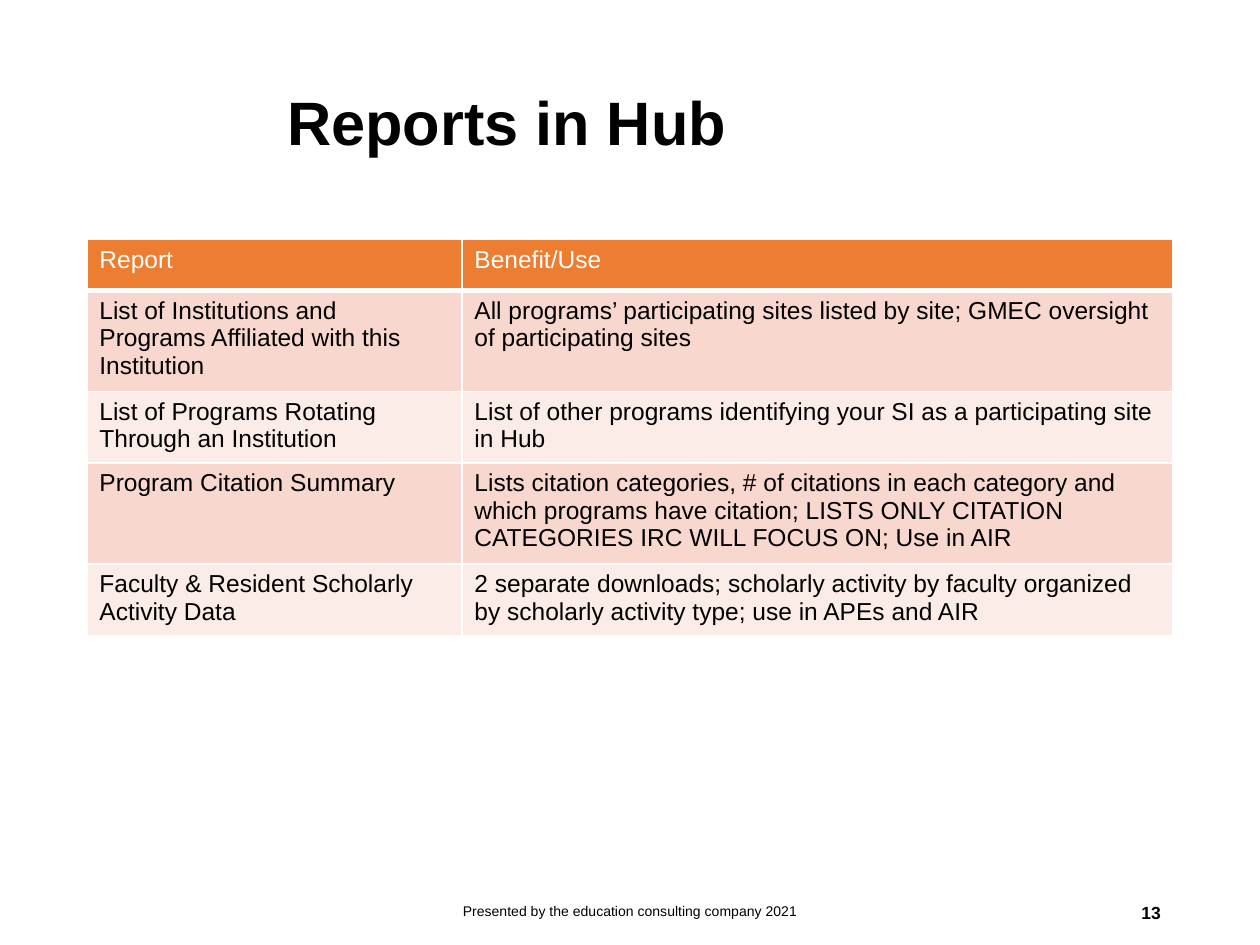
from lxml import etree
from pptx import Presentation
from pptx.dml.color import RGBColor
from pptx.enum.text import MSO_ANCHOR, PP_ALIGN
from pptx.oxml.ns import qn
from pptx.util import Cm, Pt

MIDDLE = MSO_ANCHOR.MIDDLE
LEFT, CENTER, RIGHT = PP_ALIGN.LEFT, PP_ALIGN.CENTER, PP_ALIGN.RIGHT

COLORS = {
    "text": "000000",
    "header_text": "FFFFFF",
    "header": "ED7D31",
    "odd_row": "F8D7CE",
    "even_row": "FCECE8",
    "border": "FFFFFF",
}
FONT = "Arial"

REPORTS = [
    ("Report", "Benefit/Use"),
    ("List of Institutions and Programs Affiliated with this Institution",
     "All programs’ participating sites listed by site; GMEC oversight of participating sites"),
    ("List of Programs Rotating Through an Institution",
     "List of other programs identifying your SI as a participating site in Hub"),
    ("Program Citation Summary",
     "Lists citation categories, # of citations in each category and which programs have "
     "citation; LISTS ONLY CITATION CATEGORIES IRC WILL FOCUS ON; Use in AIR"),
    ("Faculty & Resident Scholarly Activity Data",
     "2 separate downloads; scholarly activity by faculty organized by scholarly activity "
     "type; use in APEs and AIR"),
]
COLUMN_WIDTHS = (7.56, 14.34)
ROW_HEIGHT = 1.03
TABLE_LEFT, TABLE_TOP = 1.75, 4.83

# text, (left, top, width, height) in cm, vertical margin in cm,
# paragraph format, font format
LABELS = [
    ("Reports in Hub", (5.54, 0.69, 18.14, 3.68), 0.25,
     {"alignment": LEFT, "line_spacing": 0.9}, {"size": Pt(35), "bold": True}),
    ("Presented by the education consulting company 2021", (8.41, 17.86, 8.59, 1.02), 0.13,
     {"alignment": CENTER}, {"size": Pt(8)}),
    ("13", (17.93, 17.88, 5.72, 1.02), 0.13,
     {"alignment": RIGHT}, {"size": Pt(10), "bold": True}),
]


def apply_format(target, values):
    for name, value in values.items():
        setattr(target, name, value)


def write(frame, text, paragraph_format, font_format, color):
    paragraph = frame.paragraphs[0]
    apply_format(paragraph, paragraph_format)
    run = paragraph.add_run()
    run.text = text
    apply_format(run.font, {"name": FONT, **font_format})
    run.font.color.rgb = RGBColor.from_string(COLORS[color])


def add_label(slide, text, place, margin, paragraph_format, font_format):
    frame = slide.shapes.add_textbox(*map(Cm, place)).text_frame
    apply_format(frame, {
        "word_wrap": True, "vertical_anchor": MIDDLE,
        "margin_left": Cm(0.25), "margin_right": Cm(0.25),
        "margin_top": Cm(margin), "margin_bottom": Cm(margin),
    })
    write(frame, text, paragraph_format, font_format, "text")


def add_borders(cell, bottom_width):
    properties = cell._tc.get_or_add_tcPr()
    widths = {"lnL": 1, "lnR": 1, "lnT": 1, "lnB": bottom_width}
    # Borders must come before the fill
    for position, (side, width) in enumerate(widths.items()):
        line = etree.Element(qn(f"a:{side}"), w=str(Pt(width)))
        fill = etree.SubElement(line, qn("a:solidFill"))
        etree.SubElement(fill, qn("a:srgbClr"), val=COLORS["border"])
        properties.insert(position, line)


def add_report_table(slide):
    table = slide.shapes.add_table(
        len(REPORTS), len(COLUMN_WIDTHS), Cm(TABLE_LEFT), Cm(TABLE_TOP),
        Cm(sum(COLUMN_WIDTHS)), Cm(ROW_HEIGHT * len(REPORTS))).table
    for column, width in zip(table.columns, COLUMN_WIDTHS):
        column.width = Cm(width)
    for row_number, report in enumerate(REPORTS):
        # Rows grow to fit their wrapped text
        table.rows[row_number].height = Cm(ROW_HEIGHT)
        is_header = row_number == 0
        band = "header" if is_header else "odd_row" if row_number % 2 else "even_row"
        for column_number, text in enumerate(report):
            cell = table.cell(row_number, column_number)
            cell.fill.solid()
            cell.fill.fore_color.rgb = RGBColor.from_string(COLORS[band])
            add_borders(cell, 3 if is_header else 1)
            write(cell.text_frame, text, {"alignment": LEFT},
                  {"size": Pt(14), "bold": False},
                  "header_text" if is_header else "text")


def main():
    presentation = Presentation()
    presentation.slide_width, presentation.slide_height = Cm(25.4), Cm(19.05)
    slide = presentation.slides.add_slide(presentation.slide_layouts[6])

    # Title, footer and page number
    for label in LABELS:
        add_label(slide, *label)

    # Reports and their uses
    add_report_table(slide)

    presentation.save("out.pptx")


if __name__ == "__main__":
    main()
